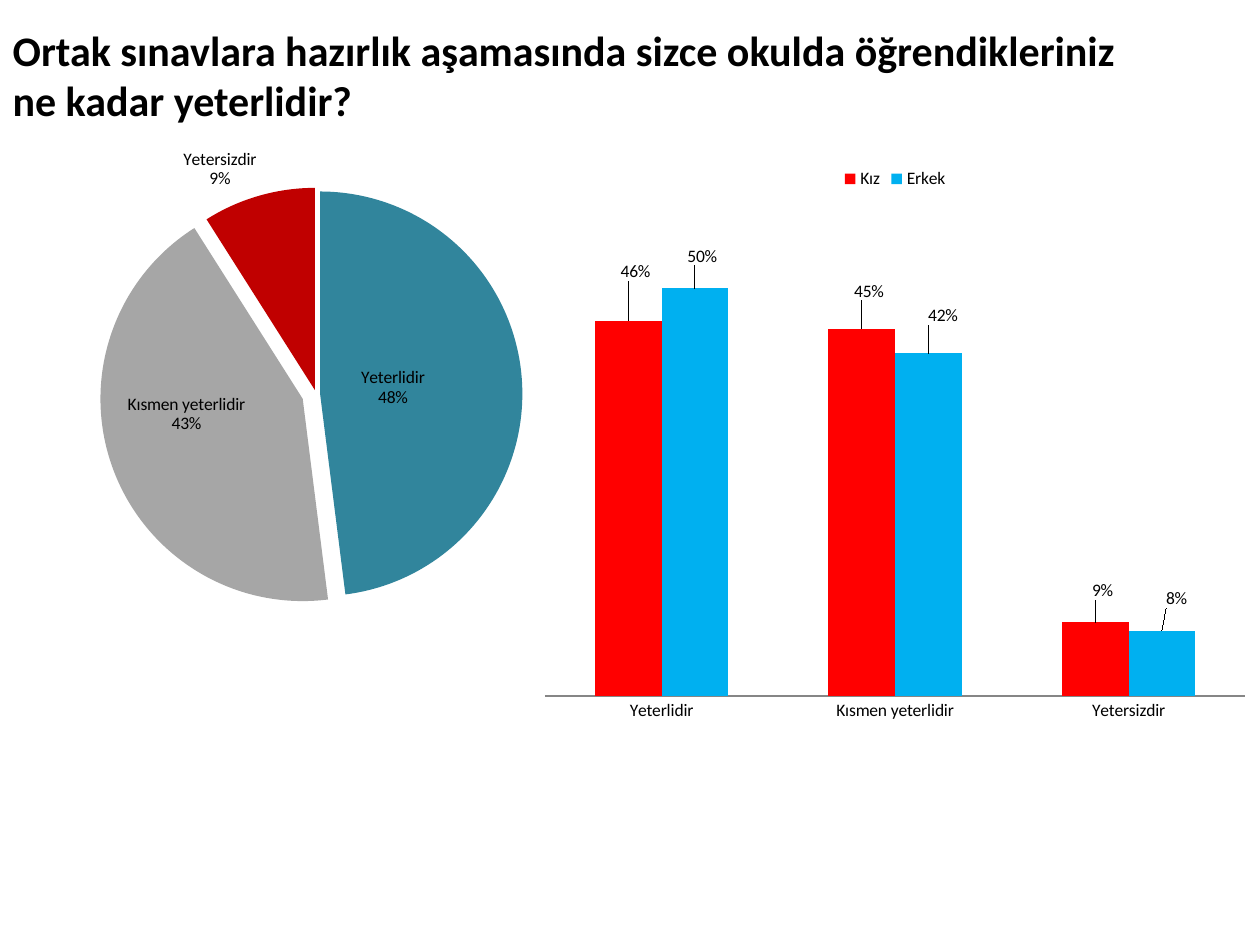
from lxml import etree
from pptx import Presentation
from pptx.chart.data import CategoryChartData
from pptx.dml.color import RGBColor
from pptx.enum import chart as ch, text
from pptx.oxml.ns import qn
from pptx.util import Pt

ANSWERS = ["Yeterlidir", "Kısmen yeterlidir", "Yetersizdir"]


def paint(fill, colour):
    fill.solid()
    fill.fore_color.rgb = RGBColor.from_string(colour)


def place(parent, index, **values):
    """Give a plot area or a label a manual layout, in fractions of the chart."""
    for old in parent.findall(qn("c:layout")):
        parent.remove(old)
    layout = etree.Element(qn("c:layout"))
    manual = etree.SubElement(layout, qn("c:manualLayout"))
    for tag, value in values.items():
        etree.SubElement(manual, qn("c:" + tag)).set("val", str(value))
    parent.insert(index, layout)


def place_plot(chart, x, y, w, h):
    plot_area = chart._chartSpace.chart.plotArea
    place(plot_area, 0, layoutTarget="inner", xMode="edge", yMode="edge",
          x=x, y=y, w=w, h=h)


def shift_label(series, index, position, dx, dy):
    series.points[index].data_label.position = position
    label = series._element.xpath(f"c:dLbls/c:dLbl[c:idx/@val={index}]")[0]
    place(label, 1, x=dx, y=dy)
    return label


def show_answer_and_share(labels):
    shown = {"showVal": 0, "showCatName": 1, "showPercent": 1}
    for tag, value in shown.items():
        labels.find(qn("c:" + tag)).set("val", str(value))
    separator = etree.Element(qn("c:separator"))
    separator.text = "\n"
    last = labels.find(qn("c:showBubbleSize"))
    if last is None:
        last = labels.find(qn("c:showPercent"))
    last.addnext(separator)


def add_chart(slide, kind, box, series, number_format):
    data = CategoryChartData(number_format=number_format)
    data.categories = ANSWERS
    for name, values in series:
        data.add_series(name, values)
    chart = slide.shapes.add_chart(kind, *map(Pt, box), data).chart
    chart.has_title = False
    chart.font.name = "Calibri"
    chart.font.size = Pt(10)
    chart.font.color.rgb = RGBColor.from_string("000000")
    return chart


def add_title(slide, box, lines):
    title = slide.shapes.title
    title.left, title.top, title.width, title.height = map(Pt, box)
    frame = title.text_frame
    frame.text = "\n".join(lines)
    frame.word_wrap = True
    frame.vertical_anchor = text.MSO_ANCHOR.MIDDLE
    for paragraph in frame.paragraphs:
        paragraph.alignment = text.PP_ALIGN.LEFT
        font = paragraph.runs[0].font
        font.name, font.size, font.bold = "Calibri", Pt(24), True
        font.color.rgb = RGBColor.from_string("000000")


def add_overall_pie(slide, box):
    chart = add_chart(slide, ch.XL_CHART_TYPE.PIE, box,
                      [("Series 1", (48, 43, 9))], "General")
    chart.has_legend = False
    place_plot(chart, 0.25, 0.12, 0.58, 0.85)
    answers = chart.plots[0].series[0]

    slices = [("31859C", 2), ("A6A6A6", 7), ("C00000", 2)]
    for index, (colour, distance) in enumerate(slices):
        fill = answers.points[index].format.fill
        paint(fill, colour)
        point = answers._element.xpath(f"c:dPt[c:idx/@val={index}]")[0]
        explosion = etree.Element(qn("c:explosion"))
        explosion.set("val", str(distance))
        point.find(qn("c:spPr")).addprevious(explosion)

    labels = answers.data_labels
    labels.number_format, labels.number_format_is_linked = "0%", False
    labels.position = ch.XL_LABEL_POSITION.OUTSIDE_END
    show_answer_and_share(labels._element)
    for index, (dx, dy) in enumerate([(-0.04, 0), (-0.03, -0.04)]):
        show_answer_and_share(shift_label(
            answers, index, ch.XL_LABEL_POSITION.CENTER, dx, dy))


def add_gender_columns(slide, box):
    genders = [
        ("Kız", (0.46, 0.45, 0.09), "FF0000",
         [(0.01, -0.06), (0.01, -0.04), (0.01, -0.03)]),
        ("Erkek", (0.5, 0.42, 0.08), "00B0F0",
         [(0.01, -0.03), (0.02, -0.04), (0.02, -0.03)]),
    ]
    chart = add_chart(slide, ch.XL_CHART_TYPE.COLUMN_CLUSTERED, box,
                      [gender[:2] for gender in genders], "0%")
    place_plot(chart, 0.02, 0.09, 0.96, 0.85)
    chart.has_legend = True
    chart.legend.position = ch.XL_LEGEND_POSITION.TOP
    chart.legend.include_in_layout = False

    shares = chart.value_axis
    shares.minimum_scale, shares.maximum_scale = 0, 0.6
    shares.has_major_gridlines = False
    shares.visible = False
    chart.category_axis.major_tick_mark = ch.XL_TICK_MARK.NONE
    paint(chart.category_axis.format.line.fill, "868686")

    plot = chart.plots[0]
    plot.gap_width, plot.overlap, plot.vary_by_categories = 150, 0, False
    for series, (_, _, colour, shifts) in zip(plot.series, genders):
        paint(series.format.fill, colour)
        labels = series.data_labels
        labels.show_value = True
        labels.number_format, labels.number_format_is_linked = "0%", False
        labels.position = ch.XL_LABEL_POSITION.OUTSIDE_END
        for index, (dx, dy) in enumerate(shifts):
            shift_label(series, index, ch.XL_LABEL_POSITION.OUTSIDE_END, dx, dy)


def main():
    deck = Presentation()
    deck.slide_width, deck.slide_height = Pt(720), Pt(540)
    slide = deck.slides.add_slide(deck.slide_layouts[5])
    add_title(slide, (0, 10, 720, 65.5), [
        "Ortak sınavlara hazırlık aşamasında sizce okulda öğrendikleriniz",
        "ne kadar yeterlidir?"])
    add_overall_pie(slide, (-36.7, 77, 402.5, 272))
    add_gender_columns(slide, (303, 88.5, 417, 329))
    deck.save("out.pptx")


if __name__ == "__main__":
    main()
